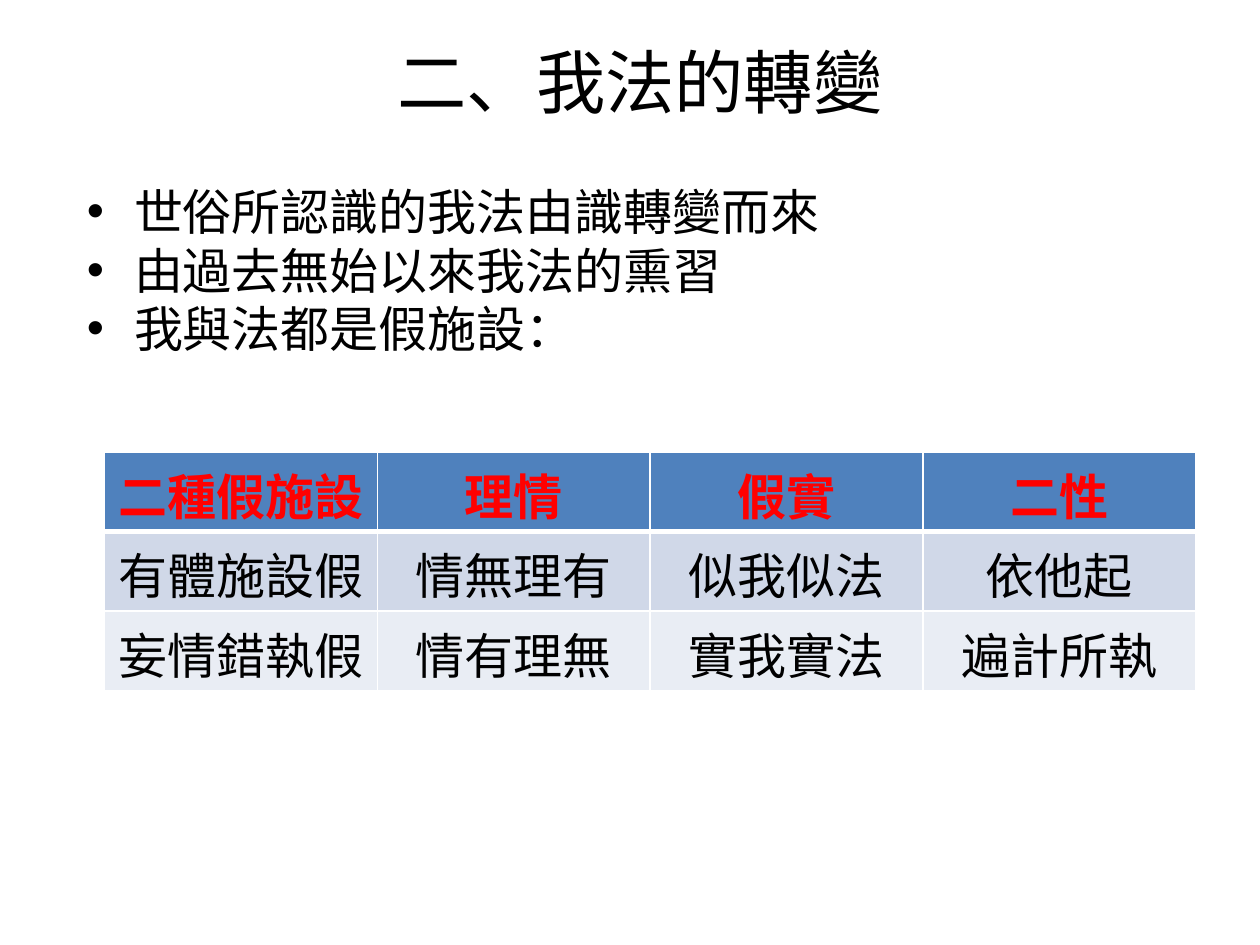
from lxml.etree import SubElement
from pptx import Presentation
from pptx.dml.color import RGBColor
from pptx.enum.text import MSO_ANCHOR as ANCHOR, MSO_AUTO_SIZE as FIT, PP_ALIGN as ALIGN
from pptx.oxml.ns import qn
from pptx.util import Pt

BLACK = RGBColor(0x00, 0x00, 0x00)
WHITE = RGBColor(0xFF, 0xFF, 0xFF)
RED = RGBColor(0xFF, 0x00, 0x00)
BLUE = RGBColor(0x4F, 0x81, 0xBD)
BAND_DARK = RGBColor(0xD0, 0xD8, 0xE8)
BAND_LIGHT = RGBColor(0xE9, 0xED, 0xF4)

FONT = "Calibri"
TITLE = "二、我法的轉變"
POINTS = [
    "世俗所認識的我法由識轉變而來",
    "由過去無始以來我法的熏習",
    "我與法都是假施設：",
]
ROWS = [
    ["二種假施設", "理情", "假實", "二性"],
    ["有體施設假", "情無理有", "似我似法", "依他起"],
    ["妄情錯執假", "情有理無", "實我實法", "遍計所執"],
]
FILLS = [BLUE, BAND_DARK, BAND_LIGHT]


def add_run(p, text, size, color=BLACK, bold=False):
    r = p.add_run()
    r.text = text
    r.font.name = FONT
    r.font.size = Pt(size)
    r.font.bold = bold
    r.font.color.rgb = color


def set_title(s, text):
    sp = s.shapes.title
    sp.left, sp.top, sp.width, sp.height = Pt(23.76), Pt(20.88), Pt(684), Pt(51.12)
    tf = sp.text_frame
    tf.auto_size = FIT.NONE
    tf.vertical_anchor = ANCHOR.MIDDLE
    tf.margin_top = tf.margin_bottom = 0
    p = tf.paragraphs[0]
    p.alignment = ALIGN.CENTER
    add_run(p, text, 39.6)


def set_bullet(p):
    pPr = p._p.get_or_add_pPr()
    pPr.set("marL", str(Pt(27)))
    pPr.set("indent", str(Pt(-27)))
    SubElement(pPr, qn("a:buFont"), typeface="Arial")
    SubElement(pPr, qn("a:buChar"), char="•")


def add_bullets(s, points):
    tf = s.shapes.add_textbox(Pt(42.48), Pt(105.84), Pt(646.56), Pt(374.4)).text_frame
    tf.word_wrap = True
    for i, text in enumerate(points):
        p = tf.add_paragraph() if i else tf.paragraphs[0]
        set_bullet(p)
        p.line_spacing = 0.83
        p.space_before = Pt(5.6 if i else 0)
        add_run(p, text, 28)


def set_borders(cell, top, bottom):
    tcPr = cell._tc.get_or_add_tcPr()
    for side, width in (("L", 1), ("R", 1), ("T", top), ("B", bottom)):
        ln = SubElement(tcPr, qn(f"a:ln{side}"), w=str(Pt(width)))
        fill = SubElement(ln, qn("a:solidFill"))
        SubElement(fill, qn("a:srgbClr"), val=str(WHITE))


def add_grid(s, rows):
    table = s.shapes.add_table(
        len(rows), len(rows[0]), Pt(59.76), Pt(258.48), Pt(623.52), Pt(136.08)
    ).table
    for i, row in enumerate(rows):
        header = i == 0
        for j, text in enumerate(row):
            cell = table.cell(i, j)
            set_borders(cell, 3 if i == 1 else 1, 3 if header else 1)
            cell.fill.solid()
            cell.fill.fore_color.rgb = FILLS[i]
            p = cell.text_frame.paragraphs[0]
            p.alignment = ALIGN.CENTER
            add_run(p, text, 28, RED if header else BLACK, header)


def main():
    prs = Presentation()
    prs.slide_width, prs.slide_height = Pt(720), Pt(540)
    s = prs.slides.add_slide(prs.slide_layouts[5])
    set_title(s, TITLE)
    add_bullets(s, POINTS)
    add_grid(s, ROWS)
    prs.save("out.pptx")


if __name__ == "__main__":
    main()
